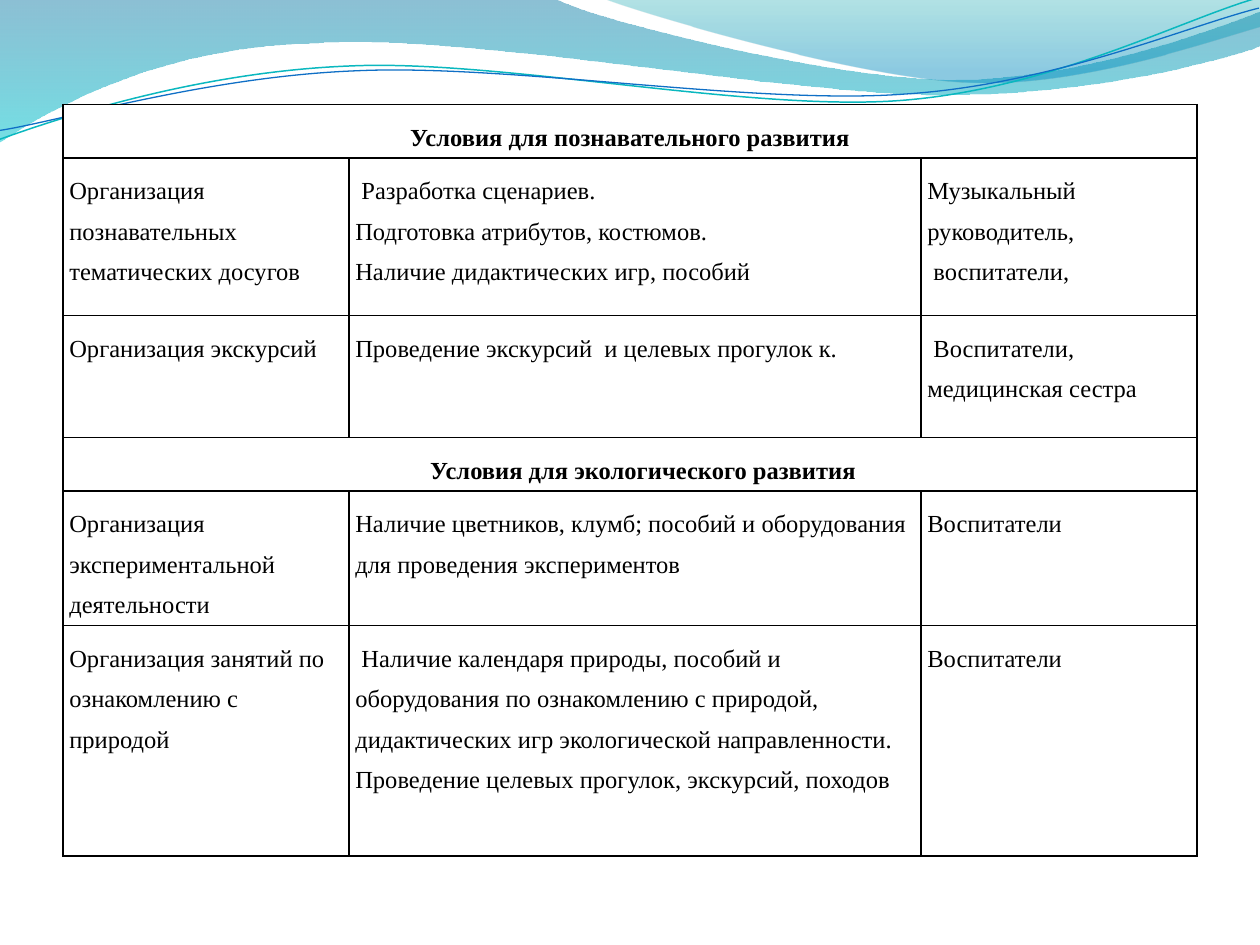
import dataclasses

import lxml.etree
import pptx
import pptx.dml.color
import pptx.enum.text
import pptx.oxml.ns
import pptx.util

Inches = pptx.util.Inches


@dataclasses.dataclass(frozen=True)
class Theme:
    font: str = "Times New Roman"
    text_size: float = 14
    text: str = "000000"
    paper: str = "FFFFFF"
    border: str = "000000"
    border_width: float = 1
    cell_margin: float = 0.05
    line_spacing: float = 1.5
    back_wave: tuple = ((0, "0074A1", 45), (1, "00C6CF", 55))
    front_wave: tuple = ((0, "00A1A9", 30), (0.8, "008BBF", 45))
    teal_line: str = "0AB8BF"
    blue_line: str = "0F6FC6"


def color(value):
    return pptx.dml.color.RGBColor.from_string(value)


def add_element(parent, tag, **attributes):
    return lxml.etree.SubElement(parent, pptx.oxml.ns.qn(tag), attributes)


class SlideBuilder:
    def __init__(self, slide, theme):
        self.slide = slide
        self.theme = theme

    def outline(self, start, segments, close):
        points = [
            (Inches(x), Inches(y))
            for segment in segments
            for x, y in zip(segment[::2], segment[1::2])
        ]
        builder = self.slide.shapes.build_freeform(Inches(start[0]), Inches(start[1]))
        builder.add_line_segments(points, close=close)
        shape = builder.convert_to_shape()
        shape.shadow.inherit = False
        lines = shape.element.spPr.iter(pptx.oxml.ns.qn("a:lnTo"))
        self.bend(list(lines), segments)
        return shape

    def bend(self, lines, segments):
        remaining = iter(lines)
        for segment in segments:
            group = [next(remaining) for _ in segment[::2]]
            if len(group) == 3:
                bezier = lxml.etree.Element(pptx.oxml.ns.qn("a:cubicBezTo"))
                group[0].addprevious(bezier)
                for line in group:
                    bezier.append(line[0])
                    line.getparent().remove(line)

    def wave(self, start, segments, stops):
        shape = self.outline(start, segments, close=True)
        shape.line.fill.background()
        shape.fill.gradient()
        shape.fill.gradient_angle = 270
        for stop, (position, value, opacity) in zip(shape.fill.gradient_stops, stops):
            stop.position = position
            stop.color.rgb = color(value)
        colors = shape.element.spPr.iter(pptx.oxml.ns.qn("a:srgbClr"))
        for element, (_, _, opacity) in zip(colors, stops):
            add_element(element, "a:alpha", val=str(opacity * 1000))

    def curve(self, start, segments, value, width):
        shape = self.outline(start, segments, close=False)
        shape.rotation = 357.3
        shape.fill.background()
        shape.line.color.rgb = color(value)
        shape.line.width = pptx.util.Pt(width)

    def cell(self, cell, paragraphs, heading=False, extra_margin=0):
        theme = self.theme
        margin = Inches(theme.cell_margin)
        cell.margin_left = Inches(theme.cell_margin + extra_margin)
        cell.margin_right = cell.margin_top = cell.margin_bottom = margin
        properties = cell._tc.get_or_add_tcPr()
        for side in ("a:lnL", "a:lnR", "a:lnT", "a:lnB"):
            line = add_element(properties, side, w=str(pptx.util.Pt(theme.border_width)))
            add_element(add_element(line, "a:solidFill"), "a:srgbClr", val=theme.border)
        cell.fill.solid()
        cell.fill.fore_color.rgb = color(theme.paper)
        for index, text in enumerate(paragraphs):
            frame = cell.text_frame
            paragraph = frame.add_paragraph() if index else frame.paragraphs[0]
            paragraph.text = text
            paragraph.line_spacing = theme.line_spacing
            paragraph.font.name = theme.font
            paragraph.font.size = pptx.util.Pt(theme.text_size)
            paragraph.font.color.rgb = color(theme.text)
            paragraph.font.bold = heading
            if heading:
                paragraph.alignment = pptx.enum.text.PP_ALIGN.CENTER

    def table(self, left, top, widths, heights, rows):
        table = self.slide.shapes.add_table(
            len(heights), len(widths), Inches(left), Inches(top),
            Inches(sum(widths)), Inches(sum(heights)),
        ).table
        table.first_row = table.horz_banding = False
        for column, width in zip(table.columns, widths):
            column.width = Inches(width)
        for index, (height, row) in enumerate(zip(heights, rows)):
            table.rows[index].height = Inches(height)
            cells = [table.cell(index, column) for column in range(len(widths))]
            if isinstance(row, Heading):
                cells[0].merge(cells[-1])
                self.cell(cells[0], [row.text], heading=True, extra_margin=row.shift)
                for covered in cells[1:]:
                    self.cell(covered, [])
            else:
                for cell, paragraphs in zip(cells, row):
                    self.cell(cell, paragraphs)


@dataclasses.dataclass
class Heading:
    text: str
    shift: float = 0


CONDITIONS = [
    Heading("Условия для познавательного развития"),
    (["Организация познавательных тематических досугов"],
     [" Разработка сценариев.\nПодготовка атрибутов, костюмов.\n"
      "Наличие дидактических игр, пособий"],
     ["Музыкальный руководитель,", " воспитатели,"]),
    (["Организация экскурсий"],
     ["Проведение экскурсий  и целевых прогулок к."],
     [" Воспитатели, медицинская сестра"]),
    Heading("Условия для экологического развития", shift=0.21),
    (["Организация экспериментальной деятельности"],
     ["Наличие цветников, клумб; пособий и оборудования для проведения экспериментов"],
     ["Воспитатели"]),
    (["Организация занятий по ознакомлению с природой"],
     [" Наличие календаря природы, пособий и оборудования по ознакомлению с природой, "
      "дидактических игр экологической направленности.\n"
      "Проведение целевых прогулок, экскурсий, походов"],
     ["Воспитатели"]),
]


def main():
    presentation = pptx.Presentation()
    presentation.slide_width = Inches(10)
    presentation.slide_height = Inches(7.5)
    slide = presentation.slides.add_slide(presentation.slide_layouts[6])
    theme = Theme()
    builder = SlideBuilder(slide, theme)

    builder.wave((0, 0), [
        (4.4, -0.01),
        (4.76, 0.17, 6.64, 0.63, 7.58, 0.63),
        (8.53, 0.63, 9.58, 0.26, 10, 0.09),
        (10.01, 0.36),
        (9.83, 0.44, 8.7, 0.76, 7.46, 0.75),
        (6.22, 0.75, 3.82, 0.28, 2.57, 0.34),
        (1.29, 0.36, 0.46, 0.83, -0.01, 1.13),
        (0, 0),
    ], theme.back_wave)
    builder.wave((4.79, -0.01), [
        (5.09, 0.11, 6.82, 0.62, 7.69, 0.65),
        (8.56, 0.69, 9.61, 0.32, 10, 0.21),
        (10, 0),
        (4.79, -0.01),
    ], theme.front_wave)
    builder.curve((-0.02, 0.87), [
        (0.47, 0.72, 1.58, 0.41, 2.78, 0.42),
        (3.96, 0.42, 5.91, 0.93, 7.12, 0.9),
        (8.32, 0.87, 9.4, 0.36, 10, 0.22),
    ], theme.teal_line, 0.85)
    builder.curve((-0.02, 0.8), [
        (0.46, 0.75, 1.64, 0.45, 2.83, 0.46),
        (4.04, 0.46, 5.96, 0.88, 7.16, 0.85),
        (8.35, 0.83, 9.42, 0.42, 10.01, 0.3),
    ], theme.blue_line, 0.75)

    builder.table(0.5, 0.83, (2.27, 4.54, 2.19),
                  (0.4, 1.25, 0.97, 0.4, 0.97, 1.83), CONDITIONS)
    presentation.save("out.pptx")


if __name__ == "__main__":
    main()
